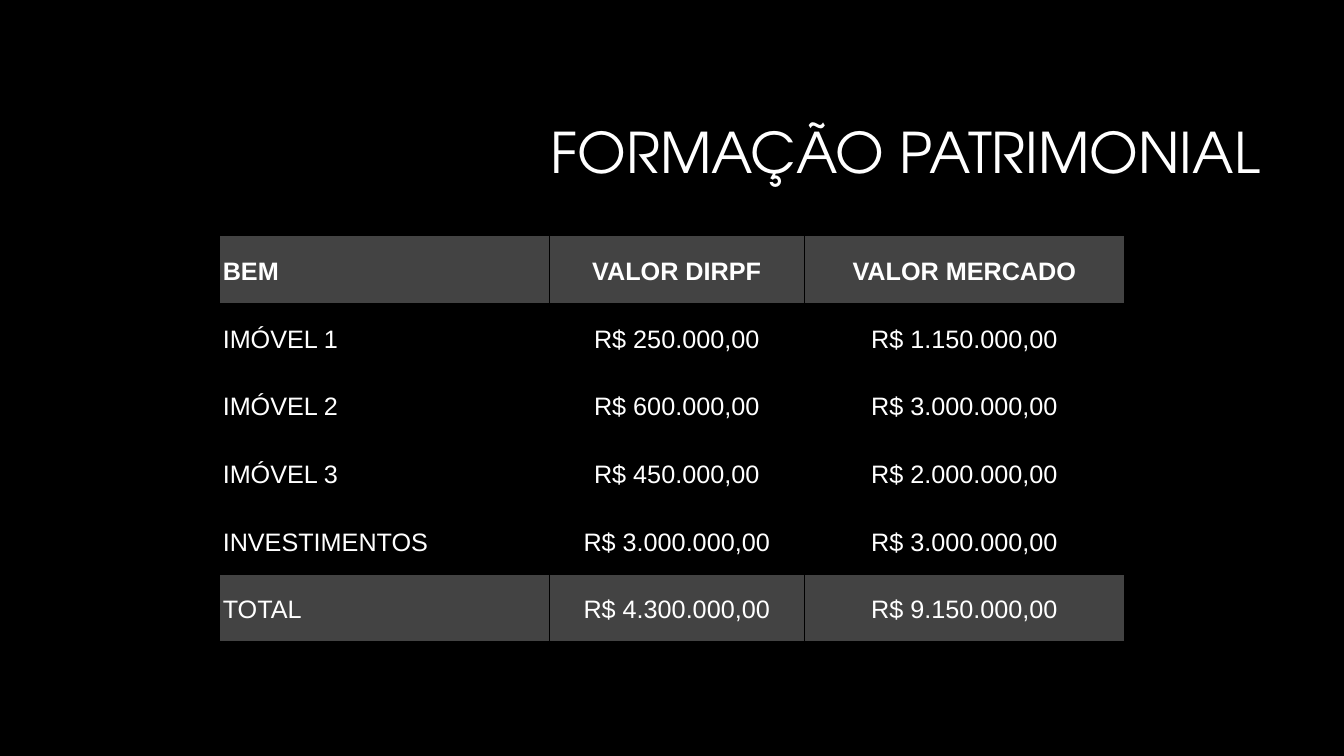
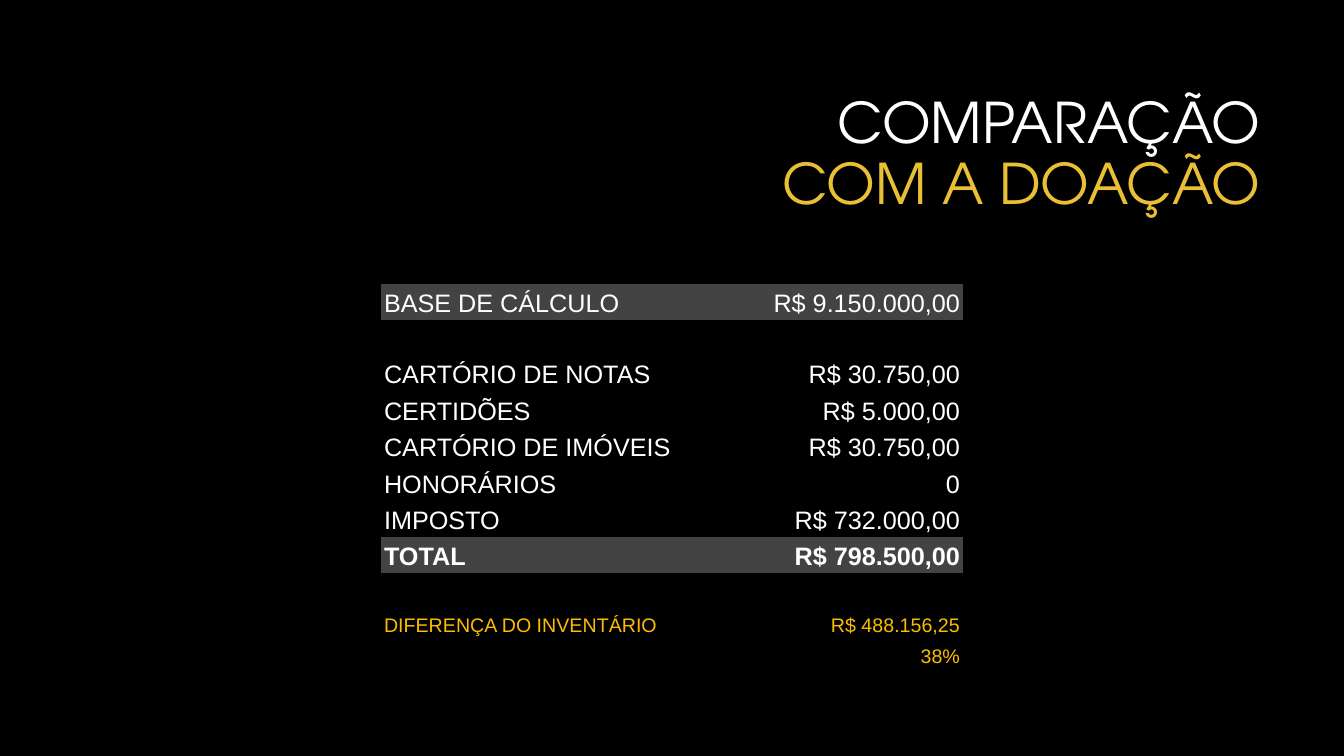
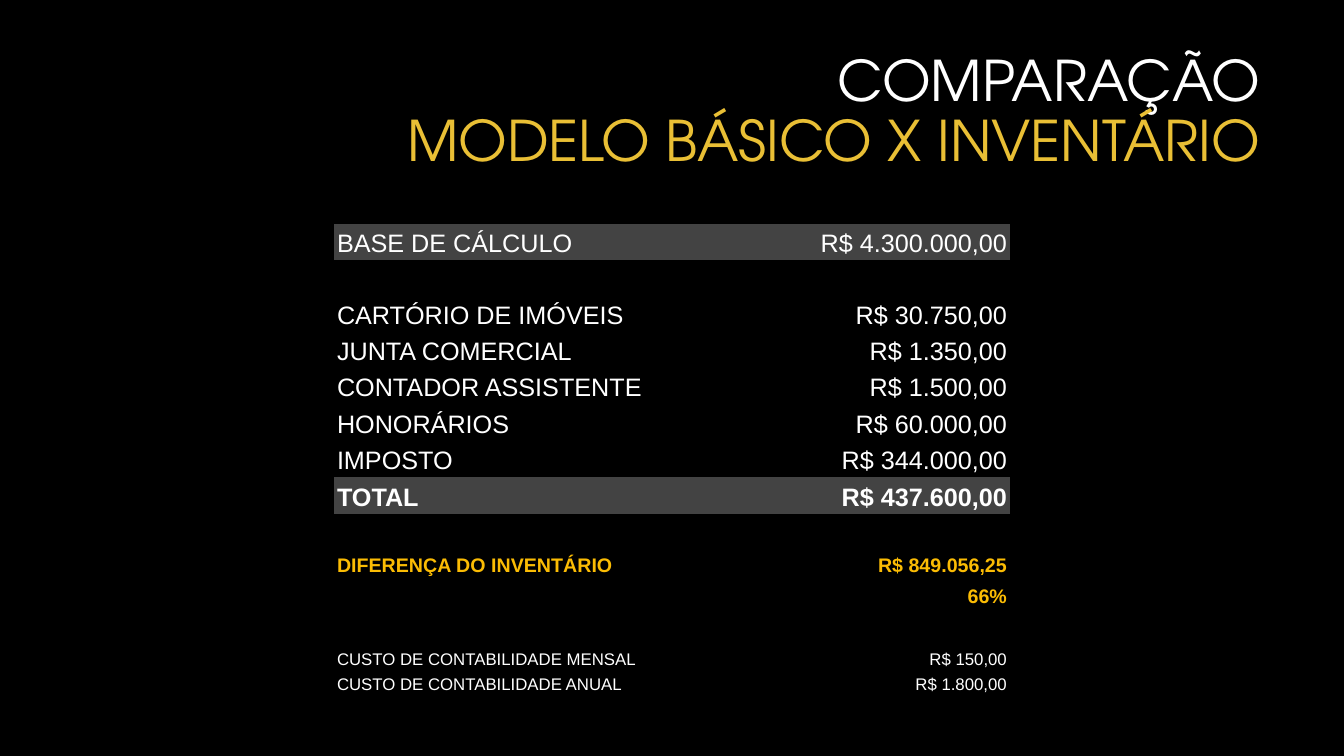
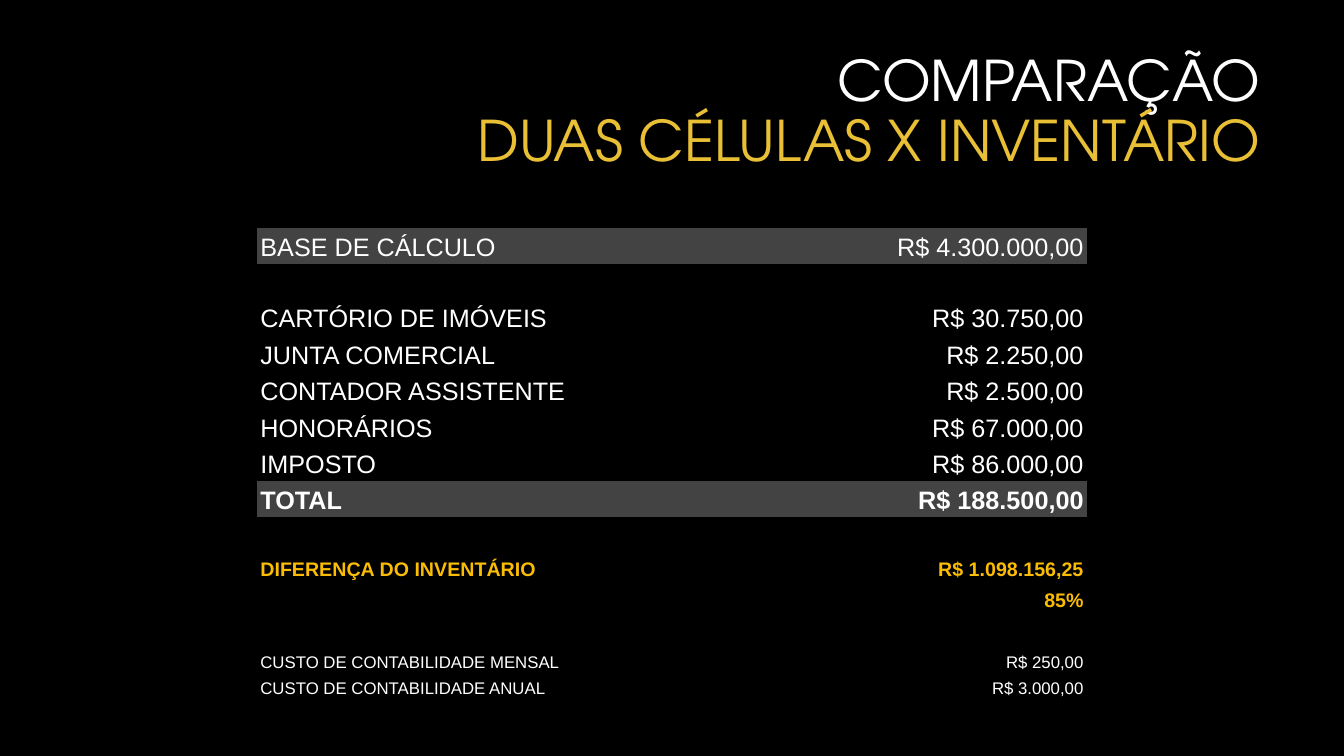
import dataclasses
import pptx
import pptx.util
import pptx.dml.color
import pptx.enum.text
import pptx.oxml.ns
import lxml.etree

Pt = pptx.util.Pt
RGB = pptx.dml.color.RGBColor.from_string
ALIGN = pptx.enum.text.PP_ALIGN
MID = pptx.enum.text.MSO_ANCHOR.MIDDLE
qn = pptx.oxml.ns.qn


@dataclasses.dataclass(frozen=True)
class Theme:
    black: str = "000000"
    white: str = "FFFFFF"
    gray: str = "434343"
    gold: str = "E9BF35"
    amber: str = "FBBC04"
    head: str = "TeX Gyre Adventor"
    body: str = "Arial"
    big: int = 40
    mid: int = 18
    low: int = 14
    tiny: int = 12
    plain: str = "{2D5ABB26-0587-4C30-8999-92F81FD0307C}"


th = Theme()
deck = pptx.Presentation()
deck.slide_width = pptx.util.Inches(13.33)
deck.slide_height = pptx.util.Inches(7.5)
col = deck.slide_width / 100
row = deck.slide_height / 100

back = deck.slide_master.background.fill
back.solid()
back.fore_color.rgb = RGB(th.black)

kinds = {
    "head": (th.mid, True, th.white, th.gray, 8.95),
    "asset": (th.mid, False, th.white, th.black, 8.95),
    "sum": (th.mid, False, th.white, th.gray, 8.95),
    "base": (th.mid, False, th.white, th.gray, 4.8),
    "gap": (th.mid, False, th.white, th.black, 4.45),
    "item": (th.mid, False, th.white, th.black, 4.8),
    "total": (th.mid, True, th.white, th.gray, 4.8),
    "note": (th.low, False, th.amber, th.black, 4.1),
    "gain": (th.low, True, th.amber, th.black, 4.1),
    "cost": (th.tiny, False, th.white, th.black, 3.4),
}

gap = ("gap", "", "")
pages = [
    ("FORMAÇÃO PATRIMONIAL", 11.2, 31.2, [24.5, 19, 23.8], ALIGN.CENTER, True, [
        ("head", "BEM", "VALOR DIRPF", "VALOR MERCADO"),
        ("asset", "IMÓVEL 1", "R$ 250.000,00", "R$ 1.150.000,00"),
        ("asset", "IMÓVEL 2", "R$ 600.000,00", "R$ 3.000.000,00"),
        ("asset", "IMÓVEL 3", "R$ 450.000,00", "R$ 2.000.000,00"),
        ("asset", "INVESTIMENTOS", "R$ 3.000.000,00", "R$ 3.000.000,00"),
        ("sum", "TOTAL", "R$ 4.300.000,00", "R$ 9.150.000,00"),
    ]),
    ("COMPARAÇÃO\vCOM A DOAÇÃO", 11.2, 37.5, [25.6, 17.7], ALIGN.RIGHT, False, [
        ("base", "BASE DE CÁLCULO", "R$ 9.150.000,00"),
        gap,
        ("item", "CARTÓRIO DE NOTAS", "R$ 30.750,00"),
        ("item", "CERTIDÕES", "R$ 5.000,00"),
        ("item", "CARTÓRIO DE IMÓVEIS", "R$ 30.750,00"),
        ("item", "HONORÁRIOS", "0"),
        ("item", "IMPOSTO", "R$ 732.000,00"),
        ("total", "TOTAL", "R$ 798.500,00"),
        gap,
        ("note", "DIFERENÇA DO INVENTÁRIO", "R$ 488.156,25"),
        ("note", "", "38%"),
    ]),
    ("COMPARAÇÃO\vMODELO BÁSICO X INVENTÁRIO", 5.6, 29.6, [32.3, 18], ALIGN.RIGHT, False, [
        ("base", "BASE DE CÁLCULO", "R$ 4.300.000,00"),
        gap,
        ("item", "CARTÓRIO DE IMÓVEIS", "R$ 30.750,00"),
        ("item", "JUNTA COMERCIAL", "R$ 1.350,00"),
        ("item", "CONTADOR ASSISTENTE", "R$ 1.500,00"),
        ("item", "HONORÁRIOS", "R$ 60.000,00"),
        ("item", "IMPOSTO", "R$ 344.000,00"),
        ("total", "TOTAL", "R$ 437.600,00"),
        gap,
        ("gain", "DIFERENÇA DO INVENTÁRIO", "R$ 849.056,25"),
        ("gain", "", "66%"),
        gap,
        ("cost", "CUSTO DE CONTABILIDADE MENSAL", "R$ 150,00"),
        ("cost", "CUSTO DE CONTABILIDADE ANUAL", "R$ 1.800,00"),
    ]),
    ("COMPARAÇÃO\vDUAS CÉLULAS X INVENTÁRIO", 5.6, 30.1, [37.7, 24], ALIGN.RIGHT, False, [
        ("base", "BASE DE CÁLCULO", "R$ 4.300.000,00"),
        gap,
        ("item", "CARTÓRIO DE IMÓVEIS", "R$ 30.750,00"),
        ("item", "JUNTA COMERCIAL", "R$ 2.250,00"),
        ("item", "CONTADOR ASSISTENTE", "R$ 2.500,00"),
        ("item", "HONORÁRIOS", "R$ 67.000,00"),
        ("item", "IMPOSTO", "R$ 86.000,00"),
        ("total", "TOTAL", "R$ 188.500,00"),
        gap,
        ("gain", "DIFERENÇA DO INVENTÁRIO", "R$ 1.098.156,25"),
        ("gain", "", "85%"),
        gap,
        ("cost", "CUSTO DE CONTABILIDADE MENSAL", "R$ 250,00"),
        ("cost", "CUSTO DE CONTABILIDADE ANUAL", "R$ 3.000,00"),
    ]),
]


def style(run, face, size, tint, bold=False):
    run.font.name = face
    run.font.size = Pt(size)
    run.font.color.rgb = RGB(tint)
    run.font.bold = bold


def edge(cell):
    props = cell._tc.get_or_add_tcPr()
    for spot, side in enumerate("LRTB"):
        line = lxml.etree.Element(qn(f"a:ln{side}"), w=str(Pt(0.75)))
        fill = lxml.etree.SubElement(line, qn("a:solidFill"))
        lxml.etree.SubElement(fill, qn("a:srgbClr"), val=th.black)
        props.insert(spot, line)


for name, high, top, wide, align, lined, data in pages:
    slide = deck.slides.add_slide(deck.slide_layouts[5])
    title = slide.shapes.title
    title.left, title.top = int(23.8 * col), int(high * row)
    title.width, title.height = int(70.7 * col), int(18.8 * row)
    frame = title.text_frame
    frame.text = name
    frame.word_wrap = True
    frame.auto_size = pptx.enum.text.MSO_AUTO_SIZE.NONE
    frame.vertical_anchor = MID
    para = frame.paragraphs[0]
    para.alignment = ALIGN.RIGHT
    para.line_spacing = 0.9
    for run, tint in zip(para.runs, (th.white, th.gold)):
        style(run, th.head, th.big, tint)

    tall = [kinds[line[0]][4] for line in data]
    span = sum(wide)
    grid = slide.shapes.add_table(
        len(data), len(wide), int((100 - span) / 2 * col), int(top * row),
        int(span * col), int(sum(tall) * row)).table
    grid.first_row = grid.horz_banding = False
    grid._tbl.tblPr.find(qn("a:tableStyleId")).text = th.plain
    for c, size in enumerate(wide):
        grid.columns[c].width = int(size * col)
    for r, (kind, *texts) in enumerate(data):
        size, bold, tint, fill, step = kinds[kind]
        grid.rows[r].height = int(step * row)
        for c, text in enumerate(texts):
            cell = grid.cell(r, c)
            cell.fill.solid()
            cell.fill.fore_color.rgb = RGB(fill)
            cell.vertical_anchor = MID
            cell.margin_left = cell.margin_right = pptx.util.Inches(0.03)
            cell.margin_top = cell.margin_bottom = pptx.util.Inches(0.02)
            if lined:
                edge(cell)
            para = cell.text_frame.paragraphs[0]
            if text:
                para.text = text
                para.alignment = align if c else ALIGN.LEFT
                para.line_spacing = 1.15
                style(para.runs[0], th.body, size, tint, bold)
            else:
                lxml.etree.SubElement(para._p, qn("a:endParaRPr"), sz=str(size * 100))

deck.save("out.pptx")
